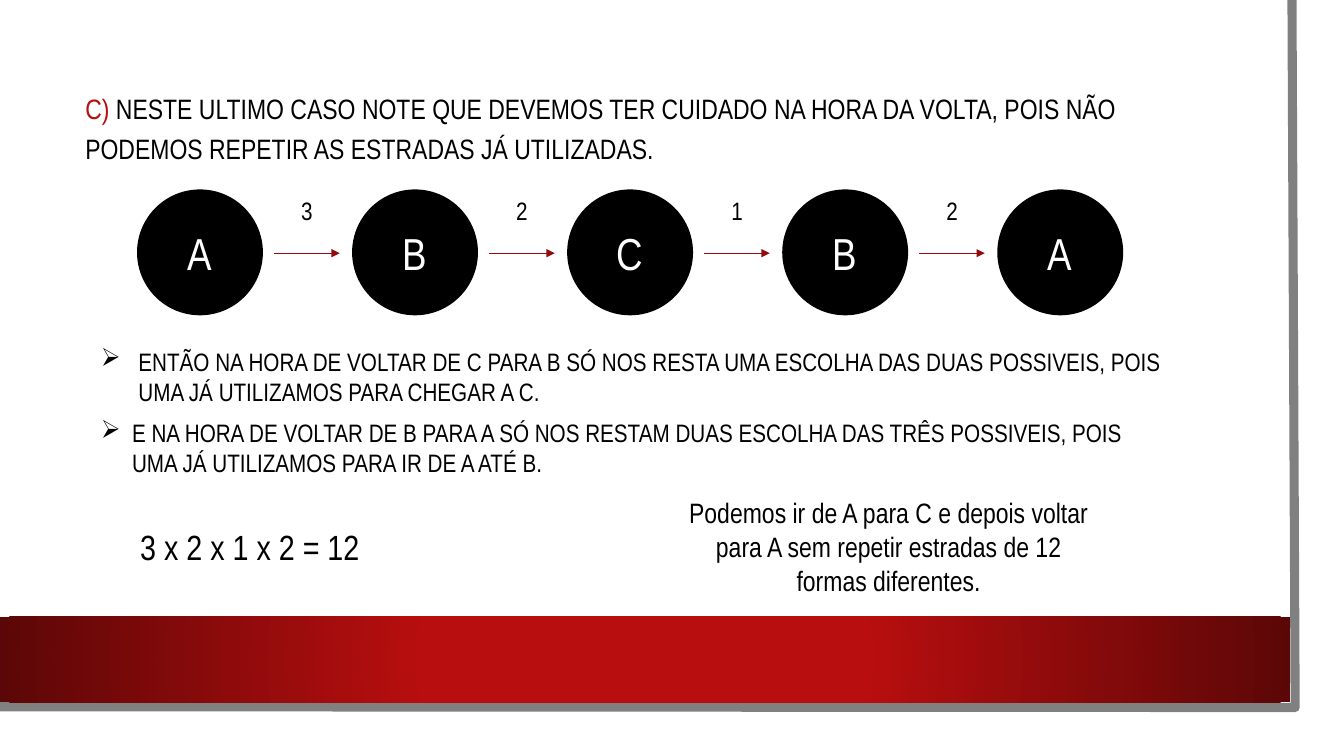
from lxml import etree
from pptx import Presentation
from pptx.dml.color import RGBColor
from pptx.enum.shapes import MSO_CONNECTOR, MSO_SHAPE
from pptx.enum.text import MSO_ANCHOR, MSO_AUTO_SIZE, PP_ALIGN
from pptx.oxml import parse_xml
from pptx.oxml.ns import qn
from pptx.util import Cm, Pt

LINE = MSO_CONNECTOR.STRAIGHT
OVAL, RECT = MSO_SHAPE.OVAL, MSO_SHAPE.RECTANGLE
MID, TOP = MSO_ANCHOR.MIDDLE, MSO_ANCHOR.TOP
GROW, FIXED = MSO_AUTO_SIZE.SHAPE_TO_FIT_TEXT, MSO_AUTO_SIZE.NONE
LEFT, CENTER = PP_ALIGN.LEFT, PP_ALIGN.CENTER

BLACK, WHITE, GRAY = "000000", "FFFFFF", "808080"
RED, WINE, DARK = "B80E0F", "930B0C", "5C0707"
GRAD = f"""<a:gradFill xmlns:a="http://schemas.openxmlformats.org/drawingml/2006/main" rotWithShape="1">
<a:gsLst><a:gs pos="34000"><a:srgbClr val="{RED}"/></a:gs>
<a:gs pos="100000"><a:srgbClr val="{DARK}"/></a:gs></a:gsLst>
<a:path path="circle"><a:fillToRect l="50000" t="50000" r="50000" b="50000"/></a:path>
</a:gradFill>"""


def color(code):
    return RGBColor.from_string(code)


def apply(target, values):
    for name, value in values.items():
        setattr(target, name, value)


class Deck:
    font = "Arial Narrow"

    def __init__(self, slide):
        self.slide = slide
        self.shapes = slide.shapes

    def words(self, frame, runs, size, align=CENTER, spacing=None):
        para = frame.paragraphs[0]
        apply(para, {"alignment": align, "line_spacing": spacing})
        for text, code in runs:
            run = para.add_run()
            run.text = text
            apply(run.font, {"name": self.font, "size": Pt(size)})
            run.font.color.rgb = color(code)
        return para

    def text(self, box, runs, size, align=CENTER, anchor=TOP, fit=GROW, spacing=None):
        frame = self.shapes.add_textbox(*map(Cm, box)).text_frame
        apply(frame, {"word_wrap": True, "auto_size": fit, "vertical_anchor": anchor})
        return self.words(frame, runs, size, align, spacing)

    def bullet(self, box, text, indent):
        props = self.text(box, [(text, BLACK)], 18, LEFT)._p.get_or_add_pPr()
        props.set("marL", str(Cm(indent)))
        props.set("indent", str(-Cm(indent)))
        etree.SubElement(props, qn("a:buChar")).set("char", "➢")

    def circle(self, box, letter):
        shape = self.shapes.add_shape(OVAL, *map(Cm, box))
        shape.shadow.inherit = False
        shape.fill.solid()
        shape.fill.fore_color.rgb = color(BLACK)
        shape.line.color.rgb = color(BLACK)
        shape.line.width = Pt(1.5)
        shape.text_frame.vertical_anchor = MID
        self.words(shape.text_frame, [(letter, WHITE)], 32)

    def arrow(self, left, top, width):
        line = self.shapes.add_connector(LINE, *map(Cm, (left, top, left + width, top)))
        line.line.color.rgb = color(WINE)
        line.line.width = Pt(0.75)
        props = line._element.spPr
        etree.SubElement(props.find(qn("a:ln")), qn("a:tailEnd")).set("type", "triangle")
        etree.SubElement(props, qn("a:effectLst"))

    def edge(self, points):
        start, *rest = [tuple(map(Cm, point)) for point in points]
        form = self.shapes.build_freeform(*start)
        form.add_line_segments(rest, close=False)
        shape = form.convert_to_shape()
        shape.shadow.inherit = False
        shape.fill.background()
        shape.line.color.rgb = color(GRAY)
        shape.line.width = Pt(6.5)

    def band(self, box):
        shape = self.shapes.add_shape(RECT, *map(Cm, box))
        shape.shadow.inherit = False
        shape.line.fill.background()
        shape._element.spPr.find(qn("a:prstGeom")).addnext(parse_xml(GRAD))


def main():
    show = Presentation()
    apply(show, {"slide_width": Cm(33.87), "slide_height": Cm(19.05)})
    deck = Deck(show.slides.add_slide(show.slide_layouts[6]))

    deck.edge([(32.56, 0), (32.64, 17.83), (-0.08, 17.81)])
    deck.band((0, 15.54, 32.51, 2.16))
    title = [
        ("C) ", RED),
        ("NESTE ULTIMO CASO NOTE QUE DEVEMOS TER CUIDADO NA HORA DA VOLTA, "
         "POIS NÃO PODEMOS REPETIR AS ESTRADAS JÁ UTILIZADAS.", BLACK),
    ]
    deck.text((1.9, 0.66, 28.88, 4.98), title, 20, LEFT, MID, FIXED, 1.2)

    step, top = 5.42, 4.8
    for i, city in enumerate("ABCBA"):
        deck.circle((3.48 + i * step, top, 3.12, 3.12), city)
    for i, roads in enumerate("3212"):
        left = 6.91 + i * step
        deck.arrow(left, 6.38, 1.65)
        deck.text((left, top, 1.65, 1.02), [(roads, BLACK)], 18)

    notes = [
        ("ENTÃO NA HORA DE VOLTAR DE C PARA B SÓ NOS RESTA UMA ESCOLHA DAS DUAS "
         "POSSIVEIS, POIS UMA JÁ UTILIZAMOS PARA CHEGAR A C.", 0.95),
        ("E NA HORA DE VOLTAR DE B PARA A SÓ NOS RESTAM DUAS ESCOLHA DAS TRÊS "
         "POSSIVEIS, POIS UMA JÁ UTILIZAMOS PARA IR DE A ATÉ B.", 0.79),
    ]
    for i, (note, indent) in enumerate(notes):
        deck.bullet((2.29, 8.59 + i * 1.8, 27.23, 1.8), note, indent)

    deck.text((3.02, 13.13, 6.55, 1.32), [("3 x 2 x 1 x 2 = 12", BLACK)], 25)
    answer = ("Podemos ir de A para C e depois voltar para A sem repetir "
              "estradas de 12 formas diferentes.")
    deck.text((16.97, 12.37, 10.85, 2.82), [(answer, BLACK)], 20)
    show.save("out.pptx")


if __name__ == "__main__":
    main()
